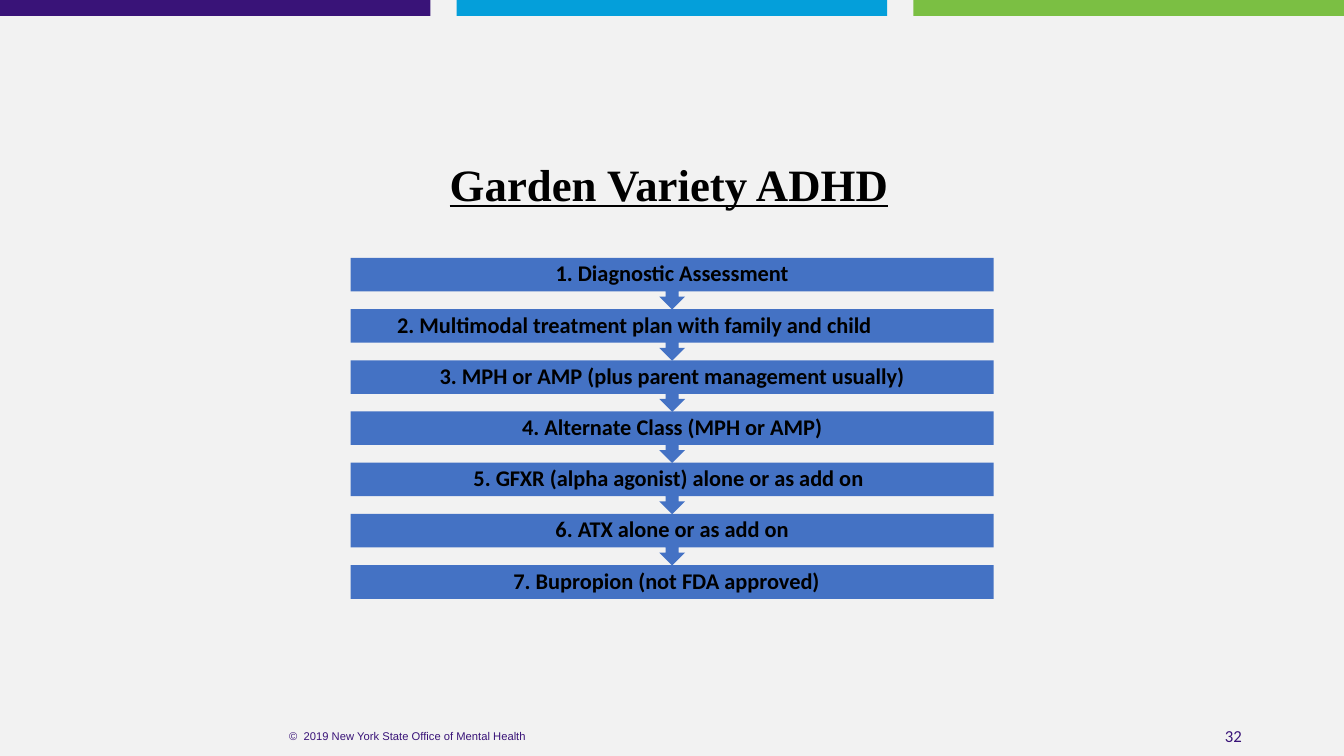
from pptx import Presentation
from pptx.dml.color import RGBColor
from pptx.enum.shapes import MSO_SHAPE
from pptx.enum.text import MSO_ANCHOR, MSO_AUTO_SIZE, PP_ALIGN
from pptx.util import Cm, Pt

RECT, CALLOUT = MSO_SHAPE.RECTANGLE, MSO_SHAPE.DOWN_ARROW_CALLOUT
CENTER, RIGHT = PP_ALIGN.CENTER, PP_ALIGN.RIGHT
MIDDLE, NO_FIT = MSO_ANCHOR.MIDDLE, MSO_AUTO_SIZE.NONE

PURPLE, CYAN, GREEN = "391378", "049FDA", "7BBF43"
GREY, BLUE, BLACK = "F2F2F2", "4472C4", "000000"

TITLE_FONT = {"name": "Times New Roman", "size": Pt(32), "bold": True, "underline": True}
STEP_FONT = {"name": "Calibri", "size": Pt(16), "bold": True}
NUMBER_FONT = {"name": "Calibri", "size": Pt(12)}
FOOTER_FONT = {"name": "Arial", "size": Pt(8)}

# Step text and the extra right inset (cm) that shifts it left
STEPS = [
    ("1. Diagnostic Assessment", 0),
    ("2. Multimodal treatment plan with family and child", 1.9),
    ("3. MPH or AMP (plus parent management usually)", 0),
    ("4. Alternate Class (MPH or AMP)", 0),
    ("5. GFXR (alpha agonist) alone or as add on", 0.18),
    ("6. ATX alone or as add on", 0),
    ("7. Bupropion (not FDA approved)", 0.28),
]


def rgb(value):
    return RGBColor.from_string(value)


def write(sp, text, font, color, align=CENTER, spacing=1.0):
    tf = sp.text_frame
    tf.word_wrap, tf.auto_size, tf.vertical_anchor = True, NO_FIT, MIDDLE
    p = tf.paragraphs[0]
    p.alignment, p.line_spacing = align, spacing
    r = p.add_run()
    r.text = text
    for name, value in font.items():
        setattr(r.font, name, value)
    r.font.color.rgb = rgb(color)
    return tf


def add_block(s, kind, left, top, width, height, color):
    sp = s.shapes.add_shape(kind, Cm(left), Cm(top), Cm(width), Cm(height))
    sp.shadow.inherit = False
    sp.fill.solid()
    sp.fill.fore_color.rgb = rgb(color)
    sp.line.fill.background()
    return sp


def add_label(s, left, width, text, font, align):
    sp = s.shapes.add_textbox(Cm(left), Cm(18.03), Cm(width), Cm(1.02))
    write(sp, text, font, PURPLE, align)


def add_title(s, text):
    sp = s.shapes.title
    sp.left, sp.top, sp.width, sp.height = Cm(8.76), Cm(3.5), Cm(16.2), Cm(2.4)
    write(sp, text, TITLE_FONT, BLACK, spacing=0.9)


def add_step(s, index, text, shift):
    last = index == len(STEPS) - 1
    kind, height = (RECT, 0.85) if last else (CALLOUT, 1.3)
    sp = add_block(s, kind, 8.84, 6.5 + 1.29 * index, 16.2, height, BLUE)
    tf = write(sp, text, STEP_FONT, BLACK, spacing=0.9)
    tf.margin_left, tf.margin_right = Cm(0.3), Cm(0.3 + shift)
    tf.margin_top = tf.margin_bottom = 0


def main():
    prs = Presentation()
    prs.slide_width, prs.slide_height = Cm(33.87), Cm(19.05)
    s = prs.slides.add_slide(prs.slide_layouts[5])
    s.background.fill.solid()
    s.background.fill.fore_color.rgb = rgb(GREY)

    # Colour bars along the top edge
    for i, color in enumerate((PURPLE, CYAN, GREEN)):
        add_block(s, RECT, 11.51 * i, 0, 10.85, 0.4, color)

    # Footer
    add_label(s, 23.93, 7.62, "32", NUMBER_FONT, RIGHT)
    add_label(s, 4.6, 11.35, "©  2019 New York State Office of Mental Health", FOOTER_FONT, CENTER)

    # Title and treatment steps
    add_title(s, "Garden Variety ADHD")
    for i, (text, shift) in enumerate(STEPS):
        add_step(s, i, text, shift)

    prs.save("out.pptx")


if __name__ == "__main__":
    main()
